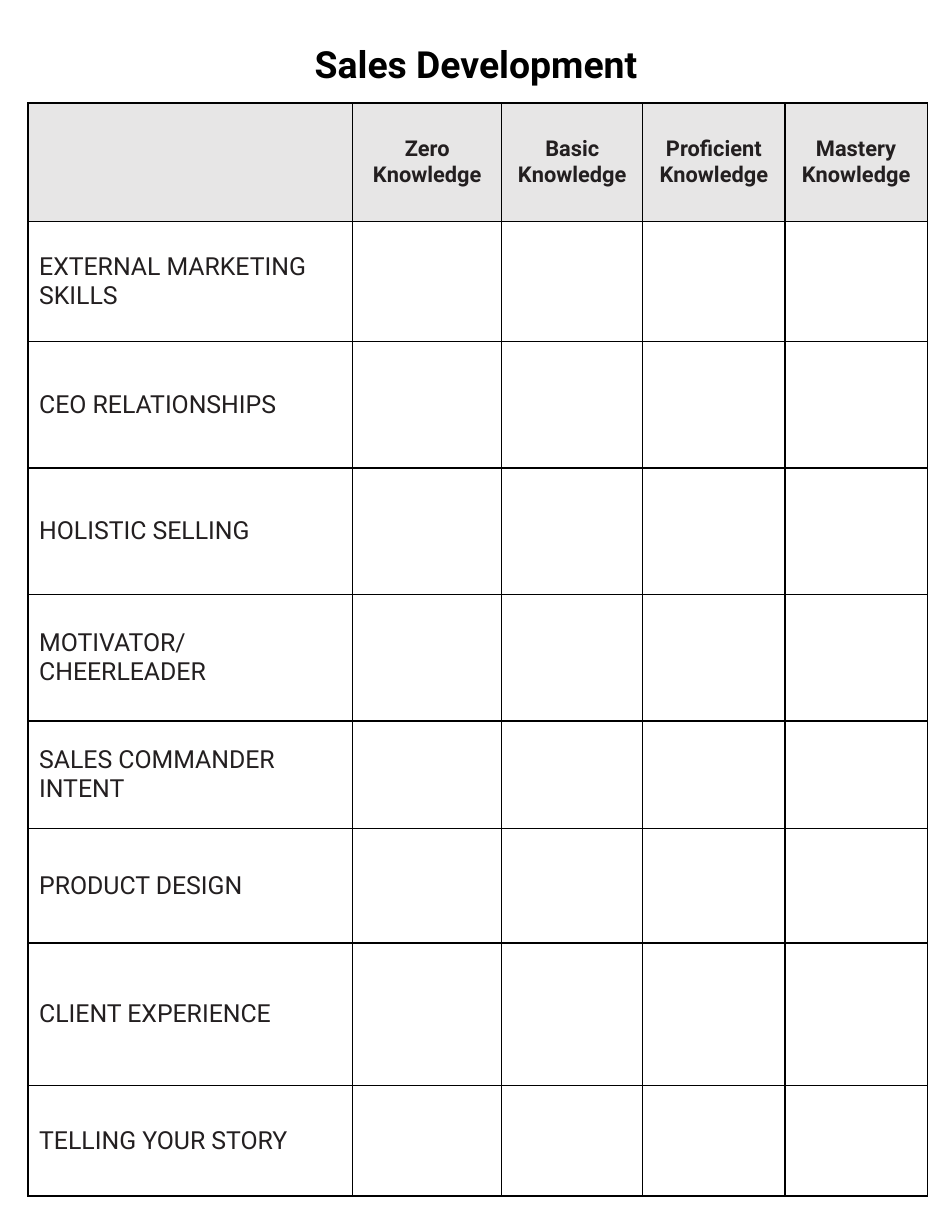
from dataclasses import dataclass

from lxml.etree import SubElement
from pptx import Presentation
from pptx.dml.color import RGBColor
from pptx.enum.text import MSO_ANCHOR, MSO_AUTO_SIZE, PP_ALIGN
from pptx.oxml.ns import qn
from pptx.util import Inches, Pt


@dataclass(frozen=True)
class Theme:
    font: str = "Roboto"
    black: str = "000000"
    ink: str = "231F20"
    header: str = "D0CECE"
    header_alpha: int = 50
    title_size: int = 24
    header_size: int = 14
    label_size: int = 16
    border: int = 1
    space_before: int = 20


class Sheet:
    def __init__(self, prs, theme):
        self.theme = theme
        self.slide = prs.slides.add_slide(prs.slide_layouts[6])
        self.col = prs.slide_width / 100
        self.row = prs.slide_height / 100

    def place(self, x, y, w, h):
        return [int(n * unit) for n, unit in
                zip((x, y, w, h), (self.col, self.row) * 2)]

    def run(self, p, text, size, color, bold=False):
        r = p.add_run()
        r.text = text
        r.font.name = self.theme.font
        r.font.size = Pt(size)
        r.font.bold = bold
        r.font.color.rgb = RGBColor.from_string(color)

    def title(self, text, *box):
        tf = self.slide.shapes.add_textbox(*self.place(*box)).text_frame
        tf.word_wrap = True
        tf.auto_size = MSO_AUTO_SIZE.SHAPE_TO_FIT_TEXT
        p = tf.paragraphs[0]
        p.alignment = PP_ALIGN.CENTER
        self.run(p, text, self.theme.title_size, self.theme.black, True)

    def table(self, x, y, widths, heights, headers, labels):
        box = self.place(x, y, sum(widths), sum(heights))
        table = self.slide.shapes.add_table(len(heights), len(widths), *box).table
        table.first_row = table.horz_banding = False
        for column, width in zip(table.columns, widths):
            column.width = int(width * self.col)
        for row, height in zip(table.rows, heights):
            row.height = int(height * self.row)
        for cell in table.iter_cells():
            self.borders(cell)
            cell.fill.background()
        for i, text in enumerate(headers):
            self.shade(table.cell(0, i))
            if text:
                self.cell_text(table.cell(0, i), text, self.theme.header_size,
                               True, PP_ALIGN.CENTER)
        for i, text in enumerate(labels, 1):
            self.cell_text(table.cell(i, 0), text, self.theme.label_size)

    def cell_text(self, cell, text, size, bold=False, align=PP_ALIGN.LEFT):
        cell.vertical_anchor = MSO_ANCHOR.MIDDLE
        p = cell.text_frame.paragraphs[0]
        p.alignment = align
        spacing = SubElement(p._p.get_or_add_pPr(), qn("a:spcBef"))
        SubElement(spacing, qn("a:spcPct"), val=str(self.theme.space_before * 1000))
        self.run(p, text, size, self.theme.ink, bold)

    def borders(self, cell):
        tc_pr = cell._tc.get_or_add_tcPr()
        for side in "LRTB":
            line = SubElement(tc_pr, qn(f"a:ln{side}"), w=str(Pt(self.theme.border)))
            fill = SubElement(line, qn("a:solidFill"))
            SubElement(fill, qn("a:srgbClr"), val=self.theme.black)

    def shade(self, cell):
        cell.fill.solid()
        cell.fill.fore_color.rgb = RGBColor.from_string(self.theme.header)
        color = cell._tc.tcPr.find(qn("a:solidFill")).find(qn("a:srgbClr"))
        SubElement(color, qn("a:alpha"), val=str(self.theme.header_alpha * 1000))


def main():
    prs = Presentation()
    prs.slide_width, prs.slide_height = Inches(8.5), Inches(11)
    s = Sheet(prs, Theme())
    s.title("Sales Development", 24, 2.91, 52, 4.55)
    levels = ["Zero", "Basic", "Proficient", "Mastery"]
    s.table(
        2.94, 8.36,
        widths=[34.12, 15.65, 14.82, 14.94, 14.94],
        heights=[9.64, 9.73, 10.27, 10.27, 10.27, 8.73, 9.27, 11.55, 9],
        headers=[""] + [f"{level} Knowledge" for level in levels],
        labels=["EXTERNAL MARKETING SKILLS", "CEO RELATIONSHIPS",
                "HOLISTIC SELLING", "MOTIVATOR/CHEERLEADER",
                "SALES COMMANDER INTENT", "PRODUCT DESIGN",
                "CLIENT EXPERIENCE", "TELLING YOUR STORY"],
    )
    prs.save("out.pptx")


if __name__ == "__main__":
    main()
